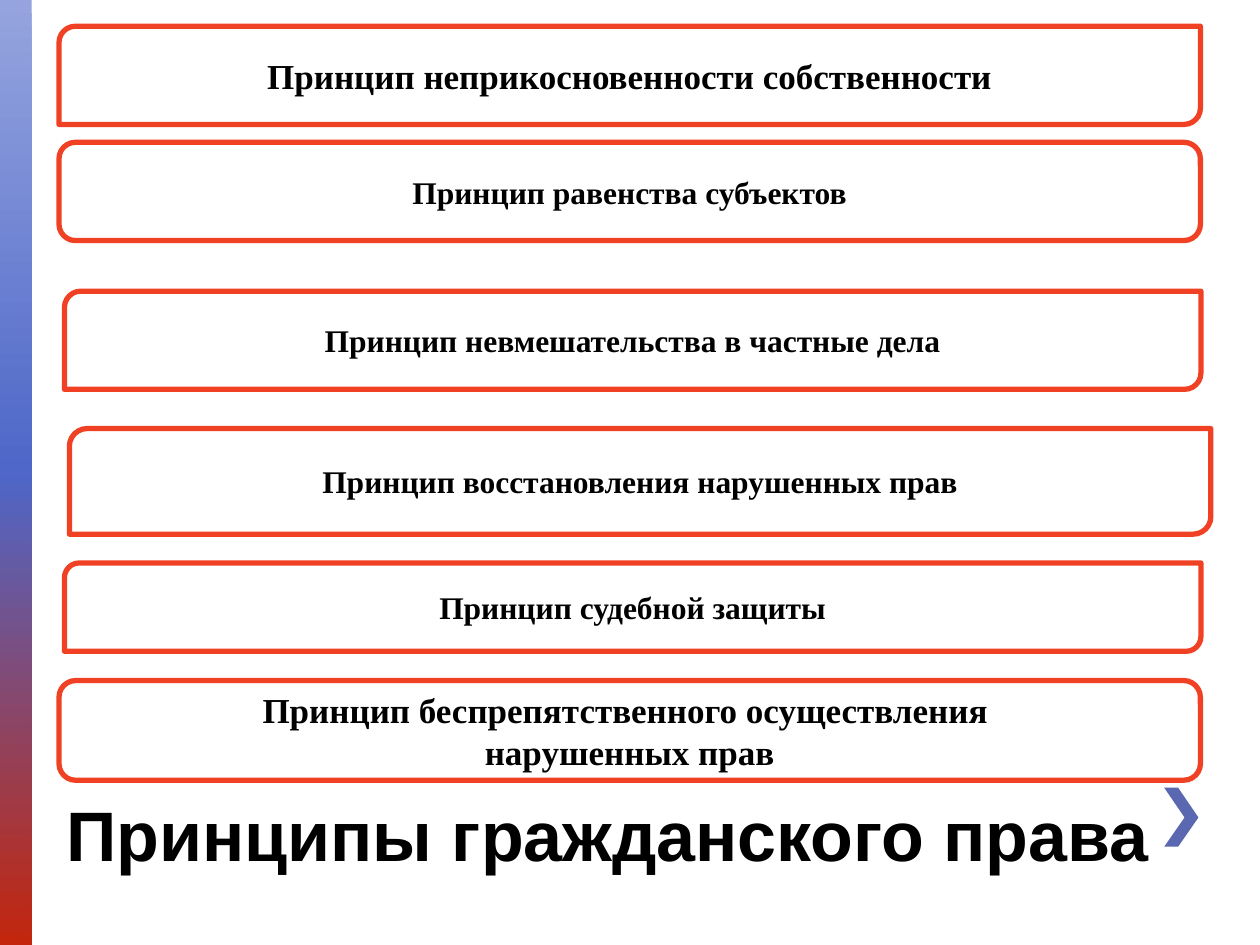
import copy
from dataclasses import dataclass

import pptx
import pptx.dml.color
import pptx.enum.shapes
import pptx.enum.text
import pptx.oxml.ns
import pptx.util

Cm = pptx.util.Cm
Kind = pptx.enum.shapes.MSO_SHAPE

COLORS = {
    "band_top": "95A4DE",
    "band_middle": "4E67C8",
    "band_bottom": "C3260C",
    "chevron": "5968B0",
    "frame": "F14124",
    "paper": "FFFFFF",
    "text": "000000",
}


@dataclass
class Principle:
    lines: tuple[str, ...]
    top: float
    left: float = 1.19
    width: float = 23.01
    height: float = 1.98
    size: int = 18
    kind: Kind = Kind.ROUND_2_DIAG_RECTANGLE
    filled: bool = True


PRINCIPLES = [
    Principle(("Принцип равенства субъектов",), 2.87,
              kind=Kind.ROUNDED_RECTANGLE, filled=False),
    Principle(("Принцип неприкосновенности собственности",), 0.53,
              size=20, filled=False),
    Principle(("Принцип невмешательства в частные дела",), 5.87, left=1.3, width=22.91),
    Principle(("Принцип восстановления нарушенных прав",), 8.64, left=1.4, height=2.13),
    Principle(("Принцип судебной защиты",), 11.35, left=1.3, width=22.91, height=1.78),
    Principle(("Принцип беспрепятственного осуществления ", "нарушенных прав"), 13.72,
              height=2.01, size=20, kind=Kind.ROUNDED_RECTANGLE),
]


def color(name: str) -> pptx.dml.color.RGBColor:
    return pptx.dml.color.RGBColor.from_string(COLORS[name])


def style_font(font, name: str, size: int) -> None:
    font.name = name
    font.size = pptx.util.Pt(size)
    font.bold = True
    font.color.rgb = color("text")


def draw_band(page) -> None:
    band = page.shapes.add_shape(Kind.RECTANGLE, 0, 0, Cm(0.64), Cm(19.05))
    band.shadow.inherit = False
    band.line.fill.background()
    band.fill.gradient()
    band.fill.gradient_angle = 270
    stop_list = band._element.spPr.find(".//" + pptx.oxml.ns.qn("a:gsLst"))
    stop_list.append(copy.deepcopy(stop_list[-1]))
    names = ("band_top", "band_middle", "band_bottom")
    for index, (stop, name) in enumerate(zip(band.fill.gradient_stops, names)):
        stop.position = index / 2
        stop.color.rgb = color(name)


def draw_chevron(page) -> None:
    builder = page.shapes.build_freeform(Cm(23.75), Cm(15.88))
    corners = [(23.47, 15.88), (23.88, 16.48), (23.47, 17.07), (23.75, 17.07), (24.16, 16.48)]
    builder.add_line_segments([(Cm(x), Cm(y)) for x, y in corners])
    chevron = builder.convert_to_shape()
    chevron.shadow.inherit = False
    chevron.fill.solid()
    chevron.fill.fore_color.rgb = color("chevron")
    chevron.line.fill.background()


def draw_title(page, text: str) -> None:
    box = page.shapes.add_textbox(Cm(1.09), Cm(14.6), Cm(23.01), Cm(3.18))
    box.text_frame.word_wrap = True
    box.text_frame.vertical_anchor = pptx.enum.text.MSO_ANCHOR.BOTTOM
    para = box.text_frame.paragraphs[0]
    para.text = text
    style_font(para.font, "Arial", 40)


def draw_principle(page, item: Principle) -> None:
    box = page.shapes.add_shape(
        item.kind, Cm(item.left), Cm(item.top), Cm(item.width), Cm(item.height))
    box.shadow.inherit = False
    if item.filled:
        box.fill.solid()
        box.fill.fore_color.rgb = color("paper")
    else:
        box.fill.background()
    box.line.color.rgb = color("frame")
    box.line.width = pptx.util.Pt(3)
    frame = box.text_frame
    frame.vertical_anchor = pptx.enum.text.MSO_ANCHOR.MIDDLE
    frame.text = "\n".join(item.lines)
    for para in frame.paragraphs:
        para.alignment = pptx.enum.text.PP_ALIGN.CENTER
        style_font(para.font, "Times New Roman", item.size)


def main() -> None:
    deck = pptx.Presentation()
    deck.slide_width, deck.slide_height = Cm(25.4), Cm(19.05)
    page = deck.slides.add_slide(deck.slide_layouts[6])
    draw_band(page)
    draw_chevron(page)
    draw_title(page, "Принципы гражданского права")
    for item in PRINCIPLES:
        draw_principle(page, item)
    deck.save("out.pptx")


if __name__ == "__main__":
    main()
